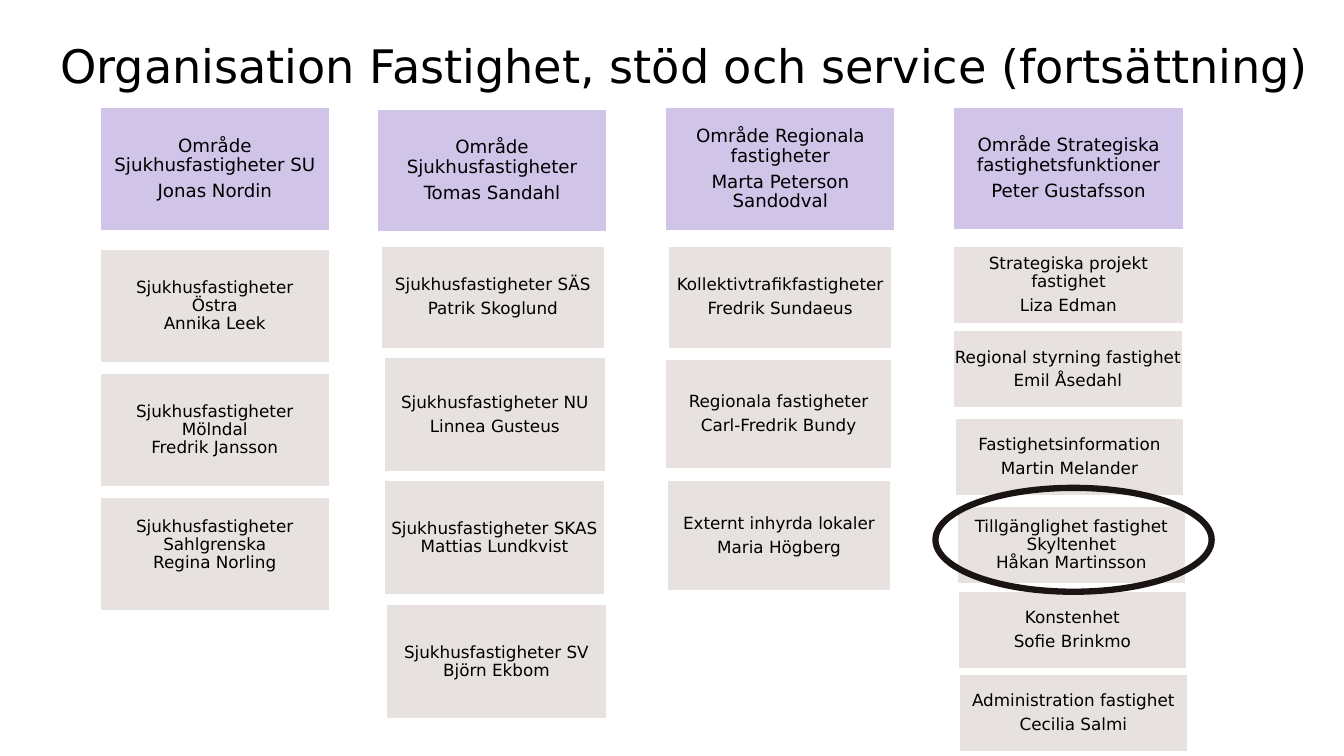
from dataclasses import dataclass

from pptx import Presentation
from pptx.dml.color import RGBColor
from pptx.enum.shapes import MSO_SHAPE as Preset
from pptx.enum.text import MSO_ANCHOR as Anchor, MSO_AUTO_SIZE as AutoSize, PP_ALIGN as Align
from pptx.slide import Slide
from pptx.text.text import Font
from pptx.util import Pt

FONT_NAME = "DejaVu Sans"
BLACK, WHITE, OUTLINE = "000000", "FFFFFF", "1A1513"


@dataclass(frozen=True)
class Style:
    fill: str
    size: float
    space_after: float
    side_inset: float


AREA = Style("D1C4E9", 13, 4.5, 9)
UNIT = Style("E7E1DF", 12, 4, 0)


@dataclass(frozen=True)
class Box:
    """One organisation box; a newline inside a paragraph is a line break."""
    left: float
    top: float
    width: float
    height: float
    paragraphs: tuple[str, ...]
    style: Style = UNIT
    bottom_inset: float = 0


HOSPITAL_UNITS = (
    ("Sjukhusfastigheter\nÖstra\nAnnika Leek", 0),
    ("Sjukhusfastigheter\nMölndal\nFredrik Jansson", 0),
    ("Sjukhusfastigheter\nSahlgrenska\nRegina Norling", 13),
)

BOXES = (
    Box(71.3, 77, 164.2, 87.8, ("Område Sjukhusfastigheter SU", "Jonas Nordin"), AREA),
    *(Box(71.3, 177.8 + 88.6 * row, 164.2, 81.4, (text,), bottom_inset=inset)
      for row, (text, inset) in enumerate(HOSPITAL_UNITS)),

    Box(269.3, 77.8, 164.2, 87.8, ("Område Sjukhusfastigheter", "Tomas Sandahl"), AREA),
    Box(272.2, 175.7, 159.8, 73.4, ("Sjukhusfastigheter SÄS", "Patrik Skoglund")),
    Box(274.3, 255.6, 158.4, 81.4, ("Sjukhusfastigheter NU", "Linnea Gusteus")),
    Box(274.3, 343.4, 157.7, 81.4, ("Sjukhusfastigheter SKAS\nMattias Lundkvist",)),
    Box(275.8, 432, 157.7, 81.4, ("Sjukhusfastigheter SV\nBjörn Ekbom",)),

    Box(475.2, 77, 164.2, 87.8,
        ("Område Regionala fastigheter", "Marta Peterson Sandodval"), AREA),
    Box(477.4, 175.7, 159.8, 73.4, ("Kollektivtrafikfastigheter", "Fredrik Sundaeus")),
    Box(475.2, 256.3, 162, 78.5, ("Regionala fastigheter", "Carl-Fredrik Bundy")),
    Box(476.6, 343.4, 159.8, 78.5, ("Externt inhyrda lokaler", "Maria Högberg")),

    Box(681.1, 76.3, 164.2, 87.8,
        ("Område Strategiska fastighetsfunktioner", "Peter Gustafsson"), AREA),
    Box(681.1, 175.7, 164.2, 55.4, ("Strategiska projekt fastighet", "Liza Edman")),
    Box(681.1, 236.2, 163.4, 55.4, ("Regional styrning fastighet", "Emil Åsedahl")),
    Box(682.6, 298.8, 162.7, 55.4, ("Fastighetsinformation", "Martin Melander")),
    Box(684, 361.4, 162.7, 55.4, ("Tillgänglighet fastighet\nSkyltenhet\nHåkan Martinsson",)),
    Box(684.7, 422.6, 162.7, 55.4, ("Konstenhet", "Sofie Brinkmo")),
    Box(685.4, 481.7, 162.7, 55.4, ("Administration fastighet", "Cecilia Salmi")),
)


def color(value: str) -> RGBColor:
    return RGBColor.from_string(value)


def format_font(font: Font, size: float) -> None:
    font.name = FONT_NAME
    font.size = Pt(size)
    font.color.rgb = color(BLACK)


def add_title(slide: Slide, text: str) -> None:
    title = slide.shapes.title
    title.left, title.top = Pt(43.2), Pt(-16.6)
    title.width, title.height = Pt(916.6), Pt(82.8)
    frame = title.text_frame
    frame.margin_left = frame.margin_right = frame.margin_top = frame.margin_bottom = 0
    frame.vertical_anchor = Anchor.BOTTOM
    frame.auto_size = AutoSize.NONE
    frame.word_wrap = True
    paragraph = frame.paragraphs[0]
    paragraph.alignment = Align.LEFT
    run = paragraph.add_run()
    run.text = text
    format_font(run.font, 33)


def add_box(slide: Slide, box: Box) -> None:
    style = box.style
    shape = slide.shapes.add_shape(
        Preset.RECTANGLE, Pt(box.left), Pt(box.top), Pt(box.width), Pt(box.height))
    shape.shadow.inherit = False
    shape.fill.solid()
    shape.fill.fore_color.rgb = color(style.fill)
    shape.line.color.rgb = color(WHITE)
    shape.line.width = Pt(1)

    frame = shape.text_frame
    frame.word_wrap = True
    frame.vertical_anchor = Anchor.MIDDLE
    frame.margin_left = frame.margin_right = Pt(style.side_inset)
    frame.margin_top, frame.margin_bottom = 0, Pt(box.bottom_inset)
    for index, text in enumerate(box.paragraphs):
        paragraph = frame.add_paragraph() if index else frame.paragraphs[0]
        paragraph.alignment = Align.CENTER
        paragraph.line_spacing = 0.9
        paragraph.space_after = Pt(style.space_after)
        for line_index, line in enumerate(text.split("\n")):
            if line_index:
                paragraph.add_line_break()
            run = paragraph.add_run()
            run.text = line
            format_font(run.font, style.size)


def add_highlight(slide: Slide) -> None:
    """Ring the accessibility unit."""
    ring = slide.shapes.add_shape(Preset.OVAL, Pt(668.2), Pt(348.5), Pt(197.3), Pt(74.2))
    ring.shadow.inherit = False
    ring.fill.background()
    ring.line.color.rgb = color(OUTLINE)
    ring.line.width = Pt(4.5)


def main() -> None:
    presentation = Presentation()
    presentation.slide_width, presentation.slide_height = Pt(960), Pt(540)
    slide = presentation.slides.add_slide(presentation.slide_layouts[5])
    add_title(slide, "Organisation Fastighet, stöd och service (fortsättning)")
    for box in BOXES:
        add_box(slide, box)
    add_highlight(slide)
    presentation.save("out.pptx")


if __name__ == "__main__":
    main()
